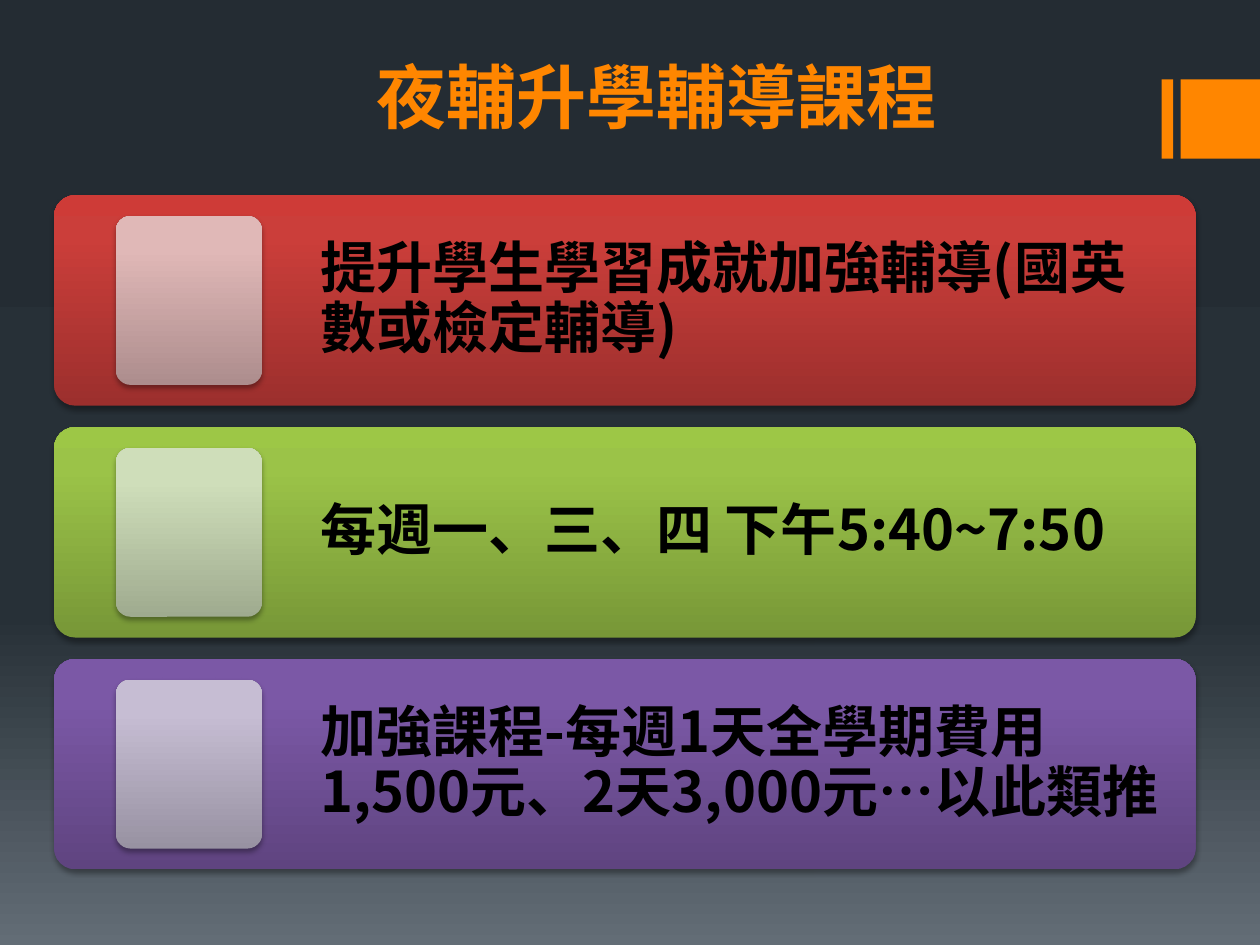
from lxml.etree import SubElement
from pptx import Presentation
from pptx.dml.color import RGBColor
from pptx.enum.shapes import MSO_SHAPE
from pptx.enum.text import MSO_ANCHOR, MSO_AUTO_SIZE, PP_ALIGN
from pptx.oxml.ns import qn
from pptx.util import Inches, Pt

FONT = "Noto Sans CJK SC"
ORANGE = RGBColor(0xFF, 0x86, 0x00)
BLACK = RGBColor(0, 0, 0)

TITLE = "夜輔升學輔導課程"
BACKGROUND = [(0, "242C33"), (65, "273037"), (100, "636D76")]

# Text, bar colours and tile colours, each from bottom to top
COURSES = [
    ("提升學生學習成就加強輔導(國英數或檢定輔導)",
     ("9C2F2D", "CB3E3A", "CE3B37"), ("AD8D8D", "E0B8B7", "E2B8B7")),
    ("每週一、三、四 下午5:40~7:50",
     ("779737", "9BC348", "9DC746"), ("9FAB8F", "CFDEBA", "D0DFBA")),
    ("加強課程-每週1天全學期費用1,500元、2天3,000元…以此類推",
     ("5F4480", "7B58A6", "7C57A8"), ("9892A2", "C6BDD3", "C6BED4")),
]
STOPS = (0, 80, 100)

BAR_LEFT, BAR_TOP, BAR_WIDTH, BAR_HEIGHT = 0.43, 1.55, 9.06, 1.67
BAR_STEP = 1.84
TILE_LEFT, TILE_WIDTH, TILE_HEIGHT = 0.92, 1.16, 1.34
TEXT_LEFT, TEXT_INSET = 2.41, 0.13


def place(left, top, width, height):
    return [Inches(value) for value in (left, top, width, height)]


def paint_gradient(fill, element, stops, angle):
    """Fill with any number of (percent, colour) stops; angle is clockwise."""
    fill.gradient()
    gradient = element.find(".//" + qn("a:gradFill"))
    stop_list = gradient.find(qn("a:gsLst"))
    for stop in list(stop_list):
        stop_list.remove(stop)
    for percent, colour in stops:
        stop = SubElement(stop_list, qn("a:gs"), pos=str(percent * 1000))
        SubElement(stop, qn("a:srgbClr"), val=colour)
    gradient.find(qn("a:lin")).set("ang", str(angle * 60000))


def add_shadow(shape):
    shape.shadow.inherit = False
    effects = shape._element.spPr.find(qn("a:effectLst"))
    shadow = SubElement(effects, qn("a:outerShdw"), blurRad=str(Pt(3.1)),
                        dist=str(Pt(1.8)), dir="5400000", rotWithShape="0")
    colour = SubElement(shadow, qn("a:srgbClr"), val="000000")
    SubElement(colour, qn("a:alpha"), val="35000")


def add_panel(group, area, colours):
    panel = group.shapes.add_shape(MSO_SHAPE.ROUNDED_RECTANGLE, *place(*area))
    panel.adjustments[0] = 0.1
    paint_gradient(panel.fill, panel._element.spPr, zip(STOPS, colours), 270)
    panel.line.fill.background()
    add_shadow(panel)


def write(frame, text, size, colour, align):
    frame.text = text
    frame.word_wrap = True
    frame.auto_size = MSO_AUTO_SIZE.NONE
    para = frame.paragraphs[0]
    para.alignment = align
    font = para.runs[0].font
    font.name, font.size, font.bold = FONT, Pt(size), True
    font.color.rgb = colour
    SubElement(font._element, qn("a:ea"), typeface=FONT)
    return para


def add_course(group, top, text, bar_colours, tile_colours):
    add_panel(group, (BAR_LEFT, top, BAR_WIDTH, BAR_HEIGHT), bar_colours)
    text_width = BAR_LEFT + BAR_WIDTH - TEXT_LEFT
    box = group.shapes.add_textbox(*place(TEXT_LEFT, top, text_width, BAR_HEIGHT))
    frame = box.text_frame
    frame.vertical_anchor = MSO_ANCHOR.MIDDLE
    frame.margin_left = frame.margin_right = Inches(TEXT_INSET)
    frame.margin_top = frame.margin_bottom = Inches(TEXT_INSET)
    para = write(frame, text, 32, BLACK, PP_ALIGN.LEFT)
    para.line_spacing = 0.9
    tile_top = top + (BAR_HEIGHT - TILE_HEIGHT) / 2
    add_panel(group, (TILE_LEFT, tile_top, TILE_WIDTH, TILE_HEIGHT), tile_colours)


def main():
    deck = Presentation()
    deck.slide_width, deck.slide_height = Inches(10), Inches(7.5)
    page = deck.slides.add_slide(deck.slide_layouts[5])
    paint_gradient(page.background.fill, page._element, BACKGROUND, 90)

    for left, width in ((9.22, 0.09), (9.37, 0.63)):
        accent = page.shapes.add_shape(
            MSO_SHAPE.RECTANGLE, *place(left, 0.63, width, 0.63))
        accent.fill.solid()
        accent.fill.fore_color.rgb = ORANGE
        accent.line.fill.background()
        accent.shadow.inherit = False

    title = page.shapes.title
    title.left, title.top, title.width, title.height = place(1.77, 0.36, 6.88, 0.78)
    title.text_frame.vertical_anchor = MSO_ANCHOR.BOTTOM
    write(title.text_frame, TITLE, 40, ORANGE, PP_ALIGN.CENTER)

    group = page.shapes.add_group_shape()
    for index, course in enumerate(COURSES):
        add_course(group, BAR_TOP + index * BAR_STEP, *course)

    deck.save("out.pptx")


if __name__ == "__main__":
    main()
